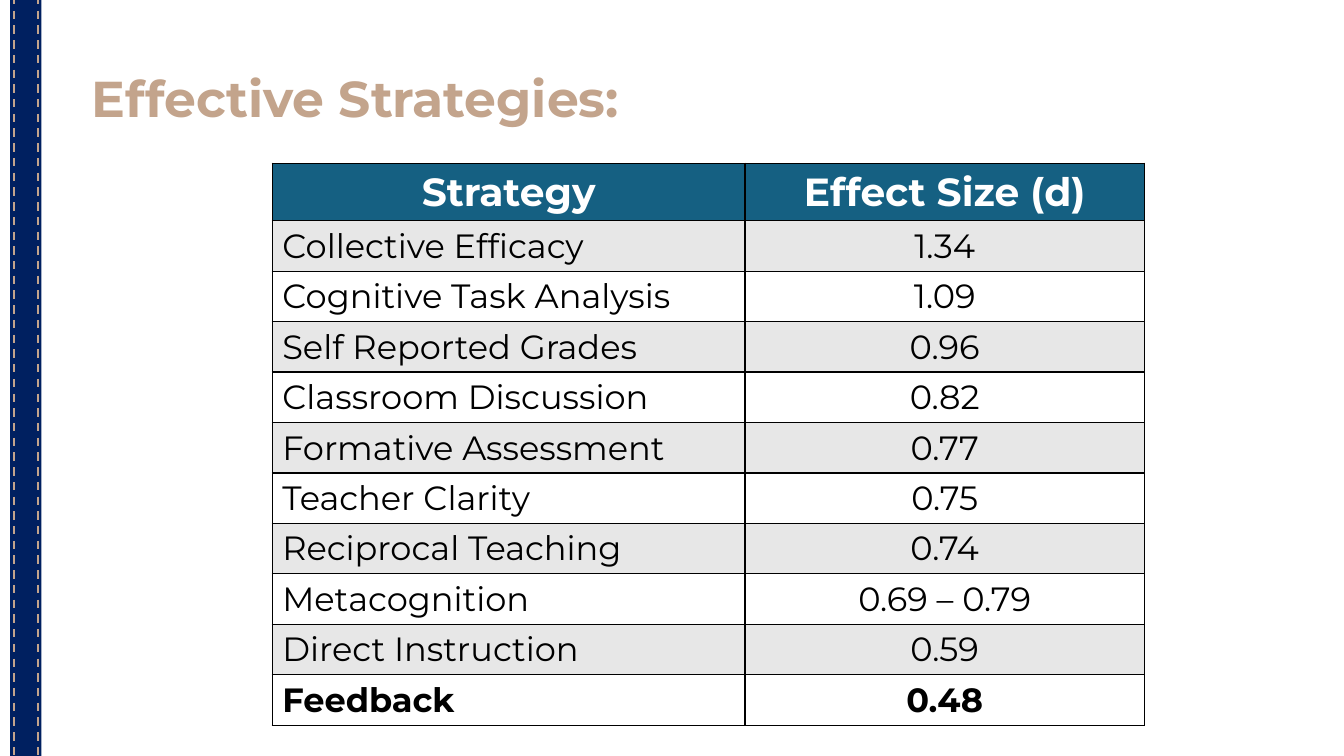
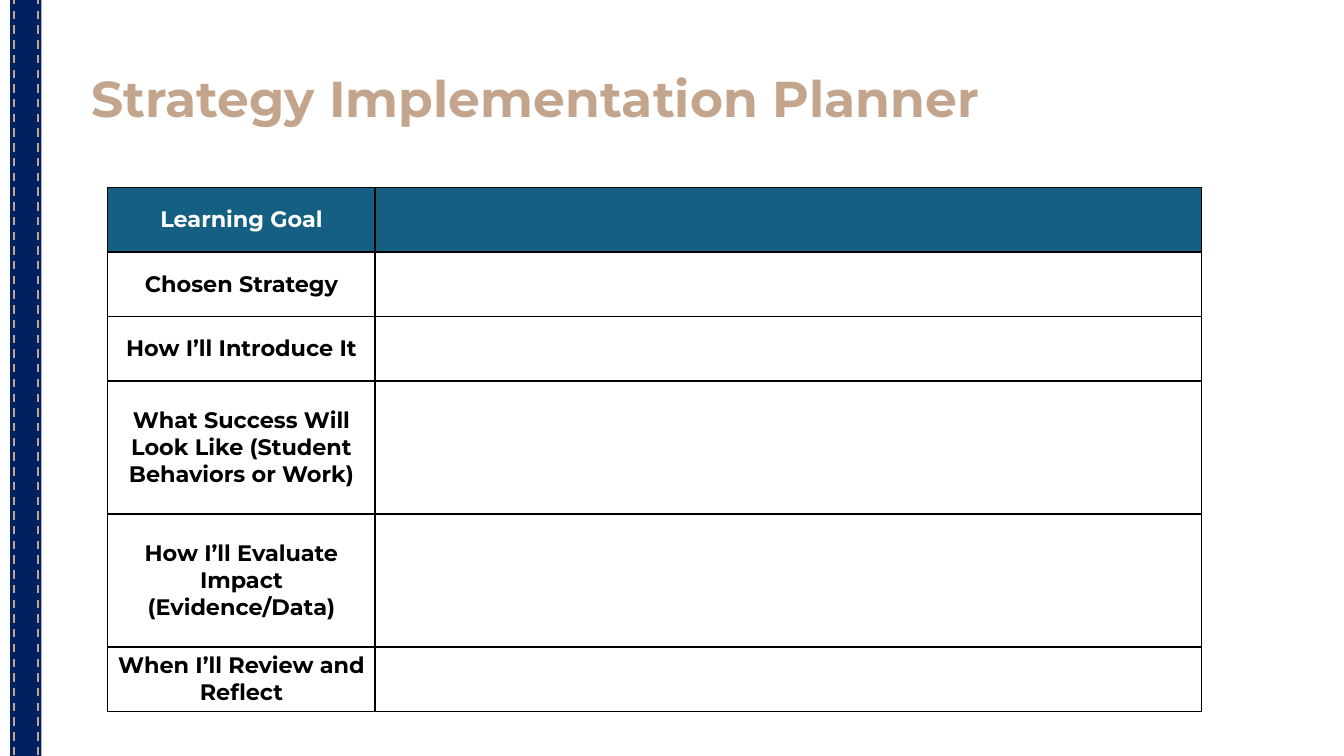
from pptx import Presentation
from pptx import util as u
from pptx.dml import color
from pptx.enum import dml, shapes, text
from pptx.oxml import ns
from lxml import etree

FONT = "Montserrat"
NAVY, TAN, TEAL = "002060", "C3A48C", "156082"
GRAY, WHITE, BLACK = "E7E7E7", "FFFFFF", "000000"
CENTER, LEFT = text.PP_ALIGN.CENTER, text.PP_ALIGN.LEFT
MIDDLE, TOP = text.MSO_ANCHOR.MIDDLE, text.MSO_ANCHOR.TOP

STRATEGIES = [
    ("Collective Efficacy", "1.34"),
    ("Cognitive Task Analysis", "1.09"),
    ("Self Reported Grades", "0.96"),
    ("Classroom Discussion", "0.82"),
    ("Formative Assessment", "0.77"),
    ("Teacher Clarity", "0.75"),
    ("Reciprocal Teaching", "0.74"),
    ("Metacognition", "0.69 – 0.79"),
    ("Direct Instruction", "0.59"),
    ("Feedback", "0.48"),
]

# Planner prompts with their row heights
PROMPTS = [
    ("Learning Goal", 0.64),
    ("Chosen Strategy", 0.64),
    ("How I’ll Introduce It", 0.64),
    ("What Success Will Look Like (Student Behaviors or Work)", 1.32),
    ("How I’ll Evaluate Impact (Evidence/Data)", 1.32),
    ("When I’ll Review and Reflect", 0.64),
]


def rgb(value):
    return color.RGBColor.from_string(value)


def paint(shape, fill):
    shape.fill.solid()
    shape.fill.fore_color.rgb = rgb(fill)


def style(para, size, ink, bold=True, align=LEFT):
    para.alignment = align
    font = para.font
    font.name, font.size, font.bold = FONT, u.Pt(size), bold
    font.color.rgb = rgb(ink)


# Shared slide parts
def add_stitch(page, x):
    line = page.shapes.add_connector(
        shapes.MSO_CONNECTOR.STRAIGHT,
        u.Inches(x), u.Inches(-0.04), u.Inches(x), u.Inches(7.53))
    line.line.color.rgb = rgb(TAN)
    line.line.width = u.Pt(1.5)
    line.line.dash_style = dml.MSO_LINE.DASH
    etree.SubElement(line._element.spPr, ns.qn("a:effectLst"))


def add_page(deck, title):
    page = deck.slides.add_slide(deck.slide_layouts[6])
    ribbon = page.shapes.add_shape(
        shapes.MSO_SHAPE.RECTANGLE,
        u.Inches(0.1), 0, u.Inches(0.31), deck.slide_height)
    ribbon.shadow.inherit = False
    paint(ribbon, NAVY)
    ribbon.line.fill.background()
    for x in (0.14, 0.38):
        add_stitch(page, x)

    box = page.shapes.add_textbox(
        u.Inches(0.81), u.Inches(0.68), u.Inches(10.3), u.Inches(0.81))
    box.text_frame.word_wrap = True
    para = box.text_frame.paragraphs[0]
    para.text = title
    para.line_spacing = 0.9
    style(para, 36, TAN)
    return page


# Tables
def add_borders(cell):
    properties = cell._tc.get_or_add_tcPr()
    for position, side in enumerate(("lnL", "lnR", "lnT", "lnB")):
        border = etree.Element(ns.qn(f"a:{side}"), w=str(u.Pt(1)))
        fill = etree.SubElement(border, ns.qn("a:solidFill"))
        etree.SubElement(fill, ns.qn("a:srgbClr"), val=BLACK)
        properties.insert(position, border)


def add_grid(page, left, top, widths, heights):
    table = page.shapes.add_table(
        len(heights), len(widths), u.Inches(left), u.Inches(top),
        u.Inches(sum(widths)), u.Inches(sum(heights))).table
    table.horz_banding = False
    for column, width in zip(table.columns, widths):
        column.width = u.Inches(width)
    for row, height in zip(table.rows, heights):
        row.height = u.Inches(height)
    return table


def fill_cell(cell, words, fill, size, ink, bold, align, anchor):
    paint(cell, fill)
    add_borders(cell)
    cell.vertical_anchor = anchor
    para = cell.text_frame.paragraphs[0]
    para.text = words
    style(para, size, ink, bold, align)


# Slides
def add_strategies(deck):
    page = add_page(deck, "Effective Strategies:")
    table = add_grid(page, 2.7, 1.62, [4.69, 3.96],
                     [0.57] + [0.5] * len(STRATEGIES))
    for column, words in enumerate(("Strategy", "Effect Size (d)")):
        fill_cell(table.cell(0, column), words, TEAL, 28, WHITE, True,
                  CENTER, MIDDLE)
    for row, entry in enumerate(STRATEGIES, 1):
        fill = GRAY if row % 2 else WHITE
        last = row == len(STRATEGIES)
        for column, words in enumerate(entry):
            fill_cell(table.cell(row, column), words, fill, 24, BLACK, last,
                      CENTER if column else LEFT, TOP)


def add_planner(deck):
    page = add_page(deck, "Strategy Implementation Planner")
    table = add_grid(page, 1.07, 1.86, [2.65, 8.2],
                     [height for _, height in PROMPTS])
    for row, (prompt, _) in enumerate(PROMPTS):
        fill, ink = (WHITE, BLACK) if row else (TEAL, WHITE)
        for column, words in enumerate((prompt, "")):
            cell = table.cell(row, column)
            cell.margin_left = cell.margin_right = u.Inches(0.07)
            cell.margin_top = cell.margin_bottom = 0
            fill_cell(cell, words, fill, 16, ink, True, CENTER, MIDDLE)


def main():
    deck = Presentation()
    deck.slide_width, deck.slide_height = u.Inches(13.33), u.Inches(7.5)
    add_strategies(deck)
    add_planner(deck)
    deck.save("out.pptx")


if __name__ == "__main__":
    main()
